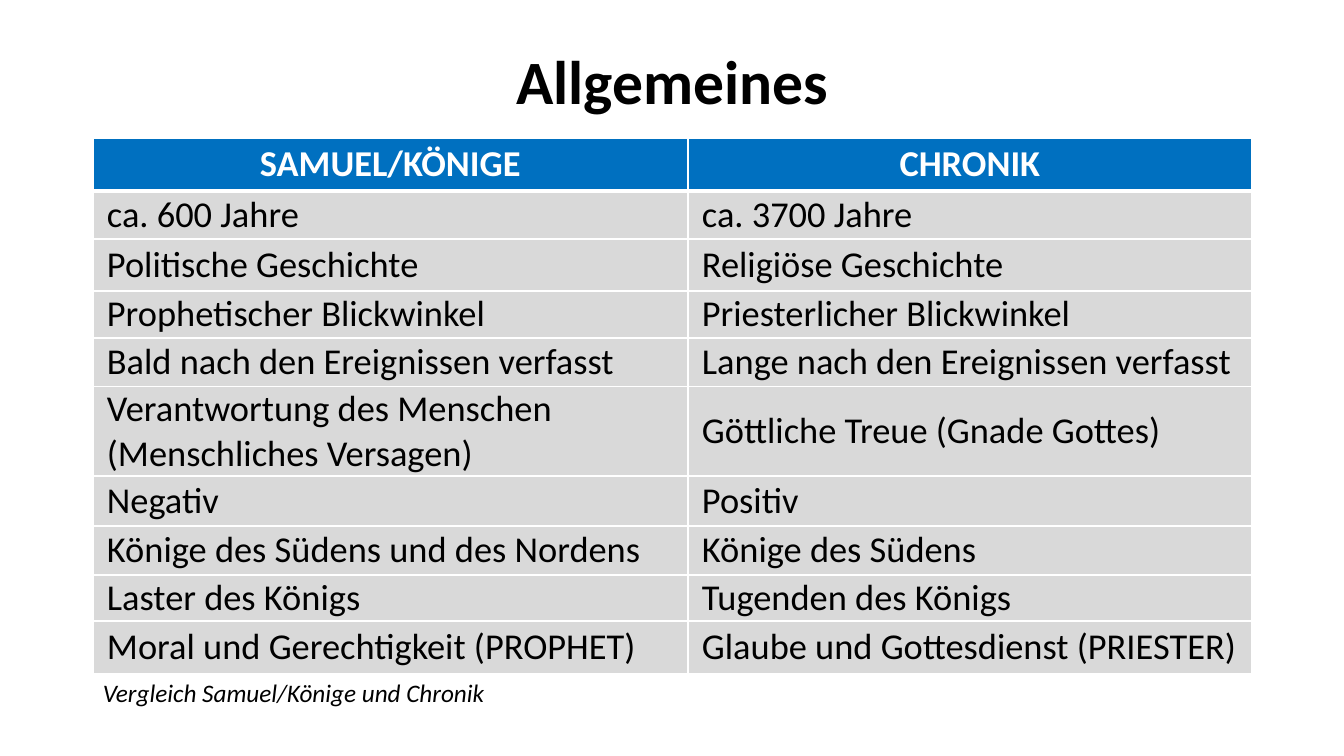
from dataclasses import dataclass

from lxml import etree
from pptx import Presentation, util as u
from pptx.dml.color import RGBColor
from pptx.enum import text
from pptx.oxml import ns


@dataclass(frozen=True)
class Theme:
    font: str = "Calibri"
    ink: str = "000000"
    white: str = "FFFFFF"
    header: str = "0070C0"
    body: str = "D9D9D9"
    title_size: int = 44
    table_size: int = 26
    caption_size: int = 18
    thin: int = 1
    thick: int = 3


def px(count):
    """Turn px (100.8 to the inch) into EMU."""
    return u.Emu(round(count * 914400 / 100.8))


class SlideBuilder:
    def __init__(self, slide, theme):
        self.slide = slide
        self.theme = theme

    def style(self, para, size, color, bold=False, italic=False, align=None):
        font = para.font
        font.name, font.size = self.theme.font, u.Pt(size)
        font.bold, font.italic = bold, italic
        font.color.rgb = RGBColor.from_string(color)
        para.alignment = align

    def title(self, words, left, top, width, height):
        box = self.slide.shapes.title
        box.left, box.top, box.width, box.height = map(px, (left, top, width, height))
        frame = box.text_frame
        frame.text = words
        frame.auto_size = text.MSO_AUTO_SIZE.NONE
        frame.vertical_anchor = text.MSO_ANCHOR.MIDDLE
        para = frame.paragraphs[0]
        para.line_spacing = 0.9
        self.style(para, self.theme.title_size, self.theme.ink, bold=True,
                   align=text.PP_ALIGN.CENTER)

    def caption(self, words, left, top, width, height):
        box = self.slide.shapes.add_textbox(*map(px, (left, top, width, height)))
        frame = box.text_frame
        frame.text = words
        frame.word_wrap = False
        frame.auto_size = text.MSO_AUTO_SIZE.SHAPE_TO_FIT_TEXT
        self.style(frame.paragraphs[0], self.theme.caption_size, self.theme.ink,
                   italic=True, align=text.PP_ALIGN.LEFT)

    def border(self, cell, side, points):
        line = etree.SubElement(cell._tc.get_or_add_tcPr(), ns.qn(f"a:ln{side}"),
                                w=str(u.Pt(points)))
        fill = etree.SubElement(line, ns.qn("a:solidFill"))
        etree.SubElement(fill, ns.qn("a:srgbClr"), val=self.theme.white)

    def cell(self, cell, words, row):
        theme = self.theme
        is_header = row == 0
        cell.text = words
        cell.vertical_anchor = text.MSO_ANCHOR.MIDDLE
        cell.margin_left = cell.margin_right = px(14)
        cell.margin_top = cell.margin_bottom = 0
        # The rule under the header is shared by the first two rows
        weights = {"L": theme.thin, "R": theme.thin,
                   "T": theme.thick if row == 1 else theme.thin,
                   "B": theme.thick if is_header else theme.thin}
        for side, points in weights.items():
            self.border(cell, side, points)
        cell.fill.solid()
        cell.fill.fore_color.rgb = RGBColor.from_string(
            theme.header if is_header else theme.body)
        self.style(cell.text_frame.paragraphs[0], theme.table_size,
                   theme.white if is_header else theme.ink, bold=is_header,
                   align=text.PP_ALIGN.CENTER if is_header else text.PP_ALIGN.LEFT)

    def table(self, rows, left, top, widths, heights):
        frame = self.slide.shapes.add_table(
            len(rows), len(widths), px(left), px(top), px(sum(widths)), px(sum(heights)))
        table = frame.table
        table.horz_banding = False
        for column, width in zip(table.columns, widths):
            column.width = px(width)
        for index, (row, height) in enumerate(zip(rows, heights)):
            table.rows[index].height = px(height)
            for position, words in enumerate(row):
                self.cell(table.cell(index, position), words, index)


COMPARISON = [
    ("SAMUEL/KÖNIGE", "CHRONIK"),
    ("ca. 600 Jahre", "ca. 3700 Jahre"),
    ("Politische Geschichte", "Religiöse Geschichte"),
    ("Prophetischer Blickwinkel", "Priesterlicher Blickwinkel"),
    ("Bald nach den Ereignissen verfasst", "Lange nach den Ereignissen verfasst"),
    ("Verantwortung des Menschen (Menschliches Versagen)", "Göttliche Treue (Gnade Gottes)"),
    ("Negativ", "Positiv"),
    ("Könige des Südens und des Nordens", "Könige des Südens"),
    ("Laster des Königs", "Tugenden des Königs"),
    ("Moral und Gerechtigkeit (PROPHET)", "Glaube und Gottesdienst (PRIESTER)"),
]


def main():
    deck = Presentation()
    deck.slide_width, deck.slide_height = px(1344), px(756)
    title_only = deck.slide_layouts[5]
    page = SlideBuilder(deck.slides.add_slide(title_only), Theme())

    # Heading, comparison table and its caption
    left, widths = 93, (595, 564)
    page.title("Allgemeines", left, 40, sum(widths), 90)
    page.table(COMPARISON, left, 138, widths,
               heights=(53, 48, 52, 47, 49, 89, 50, 49, 46, 53))
    page.caption("Vergleich Samuel/Könige und Chronik", left, 672, 406, 40)

    deck.save("out.pptx")


if __name__ == "__main__":
    main()
